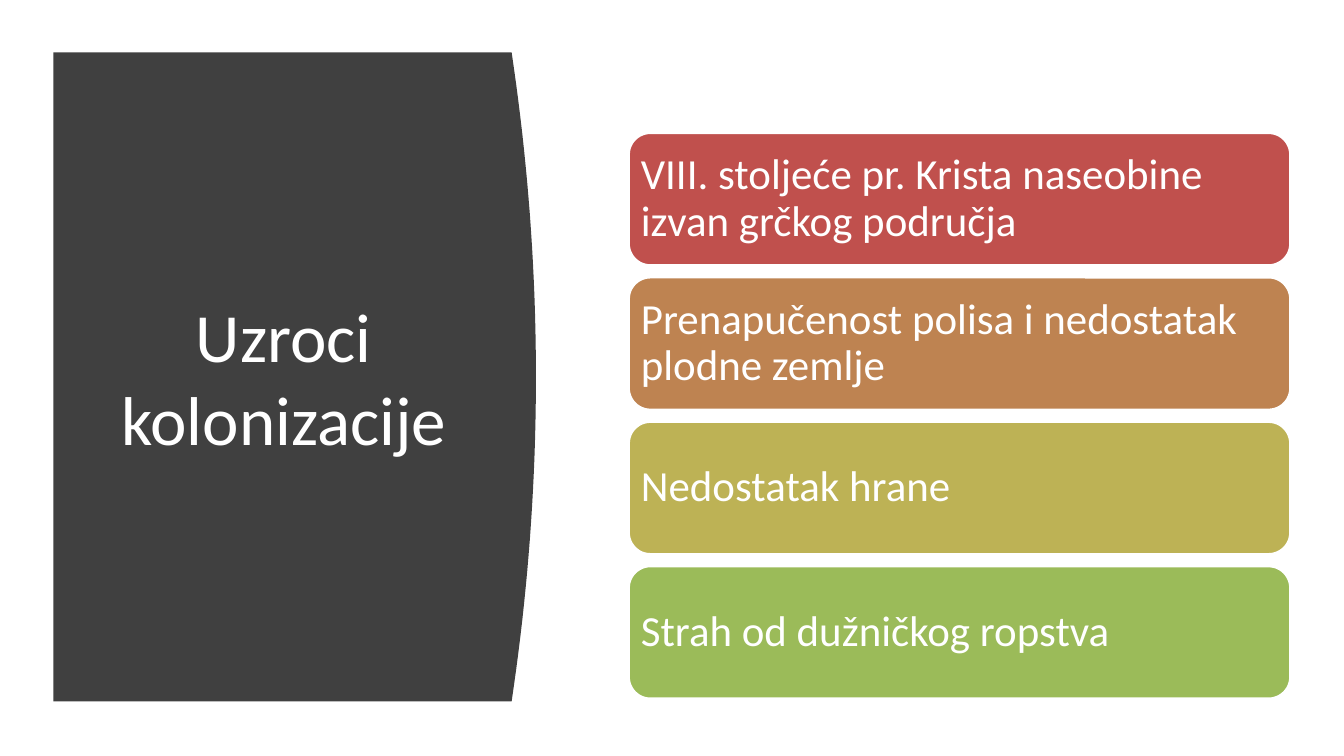
import pptx
import pptx.dml.color
import pptx.enum.shapes
import pptx.enum.text
import pptx.util

Cm = pptx.util.Cm
Pt = pptx.util.Pt
RGB = pptx.dml.color.RGBColor.from_string

COLORS = {
    "panel": "404040",
    "white": "FFFFFF",
    "red": "C0504D",
    "orange": "BE8351",
    "olive": "BDB255",
    "green": "9BBB59",
}
CAUSES = [
    ("VIII. stoljeće pr. Krista naseobine izvan grčkog područja", "red"),
    ("Prenapučenost polisa i nedostatak plodne zemlje", "orange"),
    ("Nedostatak hrane", "olive"),
    ("Strah od dužničkog ropstva", "green"),
]


def write(sp, text, size, inset):
    tf = sp.text_frame
    tf.word_wrap = True
    tf.vertical_anchor = pptx.enum.text.MSO_ANCHOR.MIDDLE
    tf.margin_left = tf.margin_right = Cm(inset)
    tf.text = text
    p = tf.paragraphs[0]
    r = p.runs[0]
    r.font.name = "Calibri"
    r.font.size = Pt(size)
    r.font.color.rgb = RGB(COLORS["white"])
    return p


prs = pptx.Presentation()
prs.slide_width = Cm(25.4)
prs.slide_height = Cm(14.29)
s = prs.slides.add_slide(prs.slide_layouts[6])

left, top, right, bottom = 1.01, 0.99, 9.67, 13.26
bulge, steps = 0.46, 40
points = []
for i in range(steps + 1):
    t = i / steps
    x = right + bulge * 4 * t * (1 - t)
    y = top + (bottom - top) * t
    points.append((Cm(x), Cm(y)))
points.append((Cm(left), Cm(bottom)))
fb = s.shapes.build_freeform(Cm(left), Cm(top))
fb.add_line_segments(points, close=True)
sp = fb.convert_to_shape()
sp.shadow.inherit = False
sp.fill.solid()
sp.fill.fore_color.rgb = RGB(COLORS["panel"])
sp.line.fill.background()

sp = s.shapes.add_textbox(Cm(1.81), Cm(2.12), Cm(7.11), Cm(9.98))
p = write(sp, "Uzroci kolonizacije", 37, 0.25)
p.alignment = pptx.enum.text.PP_ALIGN.CENTER

for i, (text, color) in enumerate(CAUSES):
    sp = s.shapes.add_shape(
        pptx.enum.shapes.MSO_SHAPE.ROUNDED_RECTANGLE,
        Cm(11.87), Cm(2.5 + 2.73 * i), Cm(12.53), Cm(2.53))
    sp.shadow.inherit = False
    sp.fill.solid()
    sp.fill.fore_color.rgb = RGB(COLORS[color])
    sp.line.color.rgb = RGB(COLORS["white"])
    sp.line.width = Pt(2)
    p = write(sp, text, 23, 0.12)
    p.alignment = pptx.enum.text.PP_ALIGN.LEFT
    p.line_spacing = 0.9

prs.save("out.pptx")
